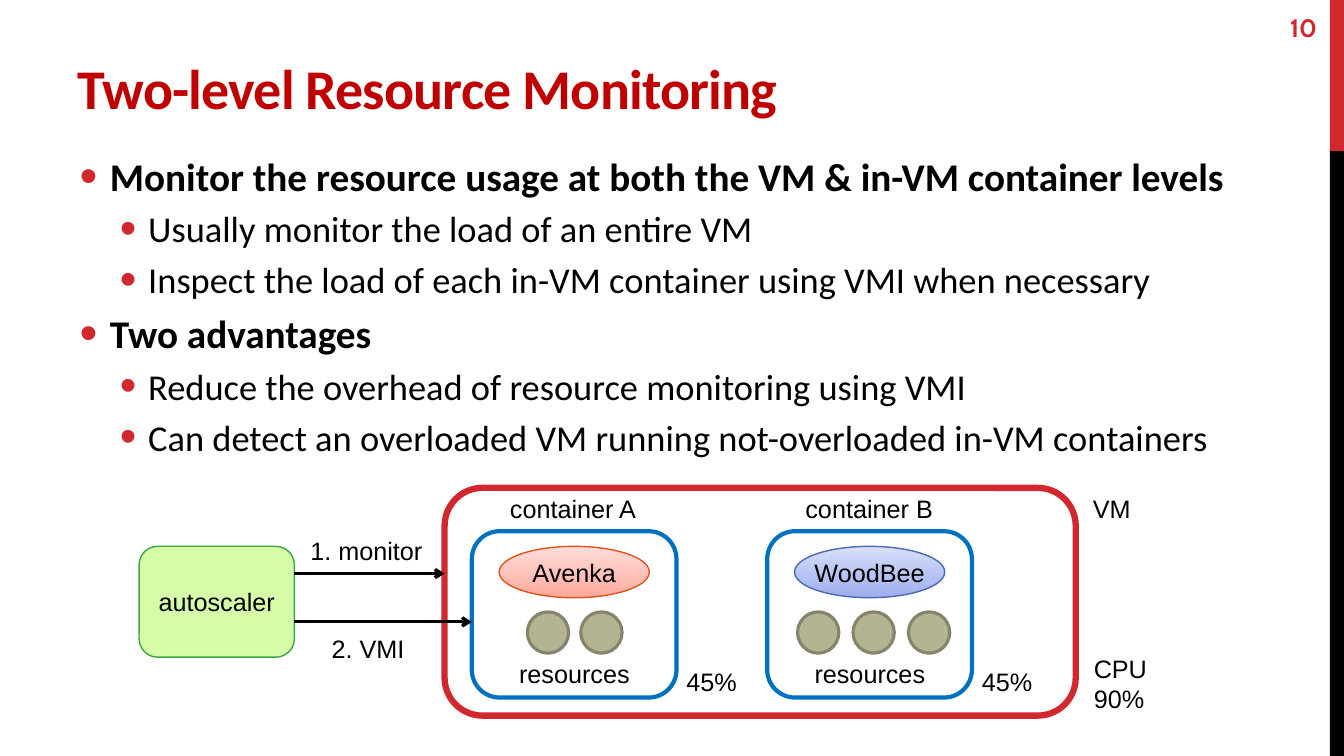
"""Build the slide on two-level resource monitoring."""
from lxml.etree import SubElement
from pptx import Presentation
from pptx.dml.color import RGBColor
from pptx.enum.shapes import MSO_CONNECTOR, MSO_SHAPE
from pptx.enum.text import MSO_ANCHOR, PP_ALIGN
from pptx.oxml.ns import qn
from pptx.util import Inches, Pt

RED, BLACK, BLUE = "D1282E", "000000", "0070C0"


def color(value):
    return RGBColor.from_string(value)


def add_element(parent, tag, **attributes):
    return SubElement(parent, qn(tag), {key: str(value) for key, value in attributes.items()})


def write(frame, text, size=18, font="Arial", ink=BLACK, bold=False, align=PP_ALIGN.LEFT,
          anchor=MSO_ANCHOR.TOP, wrap=False, spacing=None):
    frame.word_wrap = wrap
    frame.vertical_anchor = anchor
    for index, line in enumerate(text.split("\n")):
        para = frame.paragraphs[0] if index == 0 else frame.add_paragraph()
        para.alignment = align
        span = para.add_run()
        span.text = line
        span.font.size = Pt(size)
        span.font.name = font
        span.font.bold = bold
        span.font.color.rgb = color(ink)
        if spacing is not None:
            span.font._element.set("spc", str(spacing))


class SlideBuilder:
    def __init__(self, page, text_font="Calibri"):
        self.page = page
        self.text_font = text_font

    def shape(self, kind, left, top, width, height, fill=None, line=None, weight=1):
        box = self.page.shapes.add_shape(
            kind, Inches(left), Inches(top), Inches(width), Inches(height))
        box.shadow.inherit = False
        if isinstance(fill, list):
            self.gradient(box, fill)
        elif fill:
            box.fill.solid()
            box.fill.fore_color.rgb = color(fill)
        else:
            box.fill.background()
        if line:
            box.line.color.rgb = color(line)
            box.line.width = Pt(weight)
        else:
            box.line.fill.background()
        return box

    def gradient(self, box, colors):
        box.fill.gradient()
        box.fill.gradient_angle = 90
        stops = box._element.spPr.find(qn("a:gradFill")).find(qn("a:gsLst"))
        for stop in list(stops):
            stops.remove(stop)
        for position, value in zip((0, 35, 100), colors):
            stop = add_element(stops, "a:gs", pos=position * 1000)
            add_element(stop, "a:srgbClr", val=value)

    def text(self, text, left, top, width, height=0.4, **style):
        box = self.page.shapes.add_textbox(
            Inches(left), Inches(top), Inches(width), Inches(height))
        write(box.text_frame, text, **style)
        return box

    def bullets(self, items, left, top, width, height):
        text = "\n".join(line for level, line in items)
        box = self.text(text, left, top, width, height, size=26, font=self.text_font, wrap=True)
        frame = box.text_frame
        frame.margin_left = frame.margin_right = Inches(0.12)
        for para, (level, line) in zip(frame.paragraphs, items):
            para.level = level
            para.space_before = Pt(5.2 if level else 6)
            if level == 0:
                para.runs[0].font.size = Pt(28)
                para.runs[0].font.bold = True
            margin, hanging = ((0.3, 0.3), (0.68, 0.28))[level]
            properties = para._p.get_or_add_pPr()
            properties.set("marL", str(Inches(margin)))
            properties.set("indent", str(-Inches(hanging)))
            add_element(add_element(properties, "a:buClr"), "a:srgbClr", val=RED)
            add_element(properties, "a:buSzPct", val=130000)
            add_element(properties, "a:buFont", typeface="Arial")
            add_element(properties, "a:buChar", char="•")

    def arrow(self, start, end, height):
        line = self.page.shapes.add_connector(
            MSO_CONNECTOR.STRAIGHT, Inches(start), Inches(height), Inches(end), Inches(height))
        line.line.color.rgb = color(BLACK)
        line.line.width = Pt(2.25)
        add_element(line.line._get_or_add_ln(), "a:tailEnd", type="arrow")
        add_element(line._element.spPr, "a:effectLst")

    def container(self, left, title, app, fill, line, first_resource, gap, count):
        self.shape(MSO_SHAPE.ROUNDED_RECTANGLE, left, 5.27, 2.03, 1.65, line=BLUE, weight=3)
        oval = self.shape(MSO_SHAPE.OVAL, left + 0.27, 5.42, 1.49, 0.51, fill, line)
        write(oval.text_frame, app, align=PP_ALIGN.CENTER, anchor=MSO_ANCHOR.MIDDLE)
        for index in range(count):
            self.shape(MSO_SHAPE.OVAL, first_resource + index * gap, 6.07, 0.41, 0.41,
                       "B4B392", "85846C", 2.25)
        self.text(title, left + 0.28, 4.84, 1.6)
        self.text("resources", left + 0.37, 6.48, 1.35)
        self.text("45%", left + 2.03, 6.56, 0.75)


def main():
    deck = Presentation()
    deck.slide_width, deck.slide_height = Inches(13.33), Inches(7.5)
    page = deck.slides.add_slide(deck.slide_layouts[6])
    builder = SlideBuilder(page)

    builder.shape(MSO_SHAPE.RECTANGLE, 13.19, 0, 0.14, 1.5, RED)
    builder.shape(MSO_SHAPE.RECTANGLE, 13.19, 1.5, 0.14, 6, BLACK)
    builder.text("Two-level Resource Monitoring", 0.67, 0.17, 12.02, 1.08, size=40,
                 font="Calibri", ink="C00000", bold=True, anchor=MSO_ANCHOR.BOTTOM,
                 wrap=True, spacing=-60)
    builder.text("10", 12.16, 0.07, 1, size=18, font="Cabin", ink=RED, bold=True,
                 align=PP_ALIGN.RIGHT, anchor=MSO_ANCHOR.MIDDLE, wrap=True)
    builder.bullets([
        (0, "Monitor the resource usage at both the VM & in-VM container levels"),
        (1, "Usually monitor the load of an entire VM"),
        (1, "Inspect the load of each in-VM container using VMI when necessary"),
        (0, "Two advantages"),
        (1, "Reduce the overhead of resource monitoring using VMI"),
        (1, "Can detect an overloaded VM running not-overloaded in-VM containers"),
    ], 0.67, 1.46, 12.02, 5.64)

    builder.shape(MSO_SHAPE.ROUNDED_RECTANGLE, 4.41, 4.84, 6.26, 2.26, line=RED, weight=4.5)
    builder.text("VM", 10.74, 4.84, 0.65)
    builder.text("CPU\n90%", 10.75, 6.43, 0.8, 0.71)
    builder.container(4.68, "container A", "Avenka", ["FFA698", "FFBCB3", "FFDED9"],
                      "DC551F", 5.23, 0.53, 2)
    builder.container(7.61, "container B", "WoodBee", ["9AACED", "B2C0F3", "D8DFF9"],
                      "4E6AAE", 7.91, 0.55, 3)

    autoscaler = builder.shape(MSO_SHAPE.ROUNDED_RECTANGLE, 1.38, 5.42, 1.54, 1.1,
                               "D5FDA9", "3CA642")
    write(autoscaler.text_frame, "autoscaler", align=PP_ALIGN.CENTER,
          anchor=MSO_ANCHOR.MIDDLE, wrap=True)
    builder.arrow(2.92, 4.41, 5.69)
    builder.arrow(2.92, 4.68, 6.17)
    builder.text("1. monitor", 2.98, 5.26, 1.4)
    builder.text("2. VMI", 3.19, 6.23, 1)
    deck.save("out.pptx")


if __name__ == "__main__":
    main()
